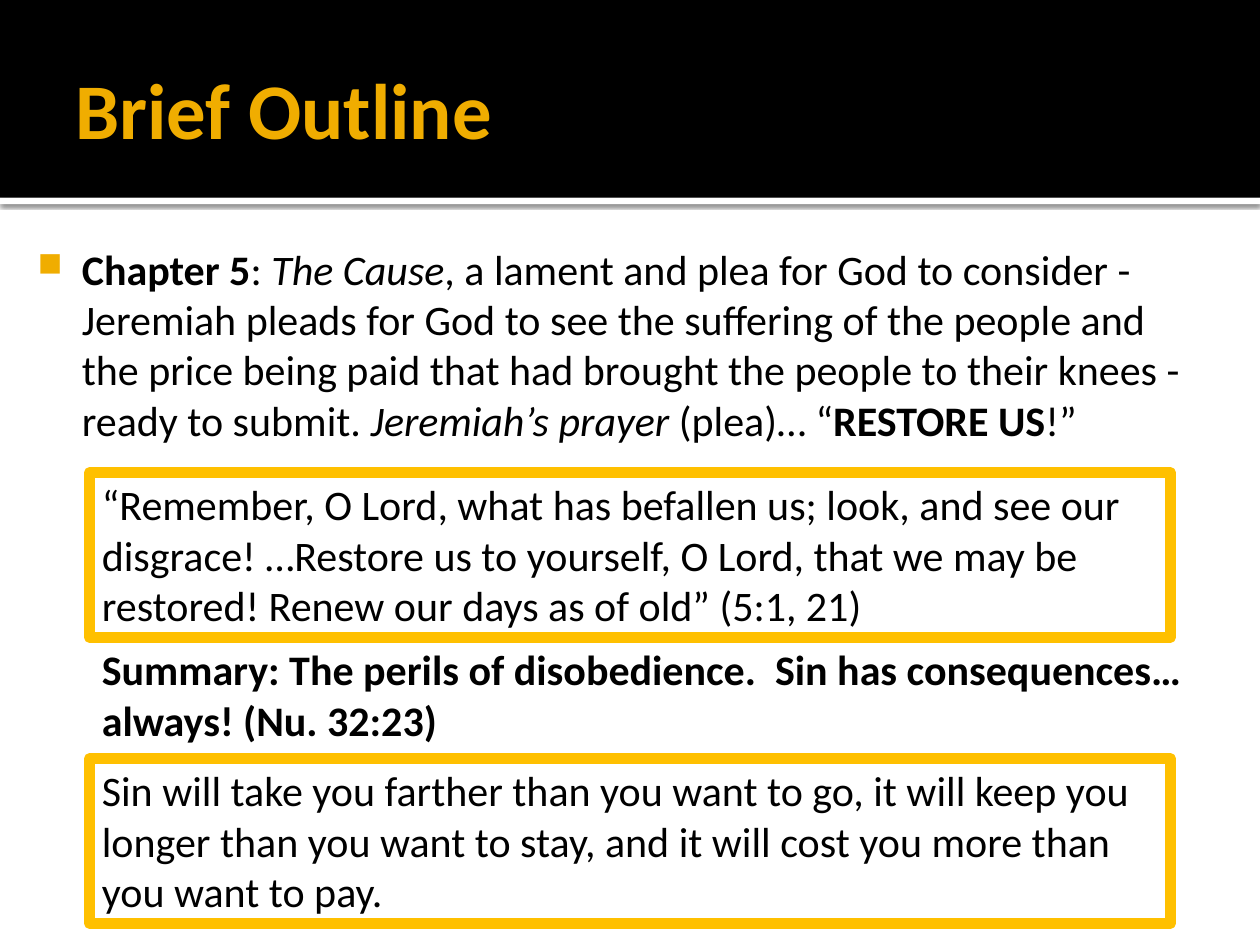
from lxml import etree
from pptx import Presentation
from pptx.dml.color import RGBColor
from pptx.enum.shapes import MSO_SHAPE
from pptx.enum.text import MSO_ANCHOR, MSO_AUTO_SIZE
from pptx.oxml.ns import qn
from pptx.util import Inches, Pt

RECTANGLE = MSO_SHAPE.RECTANGLE
MIDDLE, TOP = MSO_ANCHOR.MIDDLE, MSO_ANCHOR.TOP
GROW = MSO_AUTO_SIZE.SHAPE_TO_FIT_TEXT
NO_FIT = MSO_AUTO_SIZE.NONE
BLACK, WHITE, GOLD, AMBER = "000000", "FFFFFF", "F0AD00", "FFC000"


def color(value):
    return RGBColor.from_string(value)


def add_text(place, paragraphs, size=24, ink=BLACK, insets=(0.1, 0.05, 0.1, 0.05),
             **frame_format):
    box = slide.shapes.add_textbox(*map(Inches, place))
    frame = box.text_frame
    settings = {"word_wrap": True, "auto_size": GROW, "vertical_anchor": TOP}
    sides = ("margin_left", "margin_top", "margin_right", "margin_bottom")
    settings.update(zip(sides, map(Inches, insets)))
    settings.update(frame_format)
    for name, value in settings.items():
        setattr(frame, name, value)
    for index, runs in enumerate(paragraphs):
        paragraph = frame.paragraphs[0] if index == 0 else frame.add_paragraph()
        for wording, style in runs:
            run = paragraph.add_run()
            run.text = wording
            run.font.color.rgb = color(ink)
            font_format = {"name": "Calibri", "size": Pt(size),
                           "bold": style == "bold", "italic": style == "italic"}
            for name, value in font_format.items():
                setattr(run.font, name, value)
    return box


presentation = Presentation()
presentation.slide_width = Inches(10)
presentation.slide_height = Inches(7.5)
slide = presentation.slides.add_slide(presentation.slide_layouts[6])

header_height = 1.57
for top, height, fill in ((header_height, 0.05, WHITE), (0, header_height, BLACK)):
    band = slide.shapes.add_shape(
        RECTANGLE, 0, Inches(top), presentation.slide_width, Inches(height))
    band.fill.solid()
    band.fill.fore_color.rgb = color(fill)
    band.line.fill.background()
    band.shadow.inherit = False
    if fill == WHITE:
        effects = band._element.spPr.find(qn("a:effectLst"))
        shadow = etree.SubElement(
            effects, qn("a:outerShdw"), blurRad=str(Pt(2.5)), dist=str(Pt(0.8)),
            dir="5400000", algn="tl", rotWithShape="0")
        shadow_color = etree.SubElement(shadow, qn("a:srgbClr"), val=BLACK)
        etree.SubElement(shadow_color, qn("a:alpha"), val="60000")

add_text((0.5, 0.17, 9, 1.37), [[("Brief Outline", "bold")]], size=45, ink=GOLD,
         insets=(0.1, 0.05, 0.05, 0.05), auto_size=NO_FIT, vertical_anchor=MIDDLE)

chapter = add_text((0.11, 1.83, 9.56, 5.5), [[
    ("Chapter 5", "bold"),
    (": ", "plain"),
    ("The Cause", "italic"),
    (", a lament and plea for God to consider - Jeremiah pleads for God to see the "
     "suffering of the people and the price being paid that had brought the people "
     "to their knees - ready to submit. ", "plain"),
    ("Jeremiah’s prayer ", "italic"),
    ("(plea)… “", "plain"),
    ("RESTORE US", "bold"),
    ("!”", "plain"),
]], insets=(0.06, 0.1, 0.1, 0.05), auto_size=NO_FIT)
bullet = chapter.text_frame.paragraphs[0]._p.get_or_add_pPr()
bullet.set("marL", str(Inches(0.48)))
bullet.set("indent", str(Inches(-0.35)))
bullet_color = etree.SubElement(bullet, qn("a:buClr"))
etree.SubElement(bullet_color, qn("a:srgbClr"), val=GOLD)
etree.SubElement(bullet, qn("a:buSzPct"), val="80000")
etree.SubElement(bullet, qn("a:buChar"), char="■")

quotes = (
    (3.75, "“Remember, O Lord, what has befallen us; look, and see our disgrace! "
           "…Restore us to yourself, O Lord, that we may be restored! Renew our days "
           "as of old” (5:1, 21)"),
    (6.02, "Sin will take you farther than you want to go, it will keep you longer "
           "than you want to stay, and it will cost you more than you want to pay."),
)
for top, wording in quotes:
    quote = add_text((0.71, top, 8.58, 1.31), [[(wording, "plain")]])
    quote.line.color.rgb = color(AMBER)
    quote.line.width = Pt(6)

add_text((0.71, 5.06, 9.18, 0.91), [
    [("Summary: The perils of disobedience.  Sin has consequences…", "bold")],
    [("always! (Nu. 32:23)", "bold")],
], word_wrap=False)

presentation.save("out.pptx")
